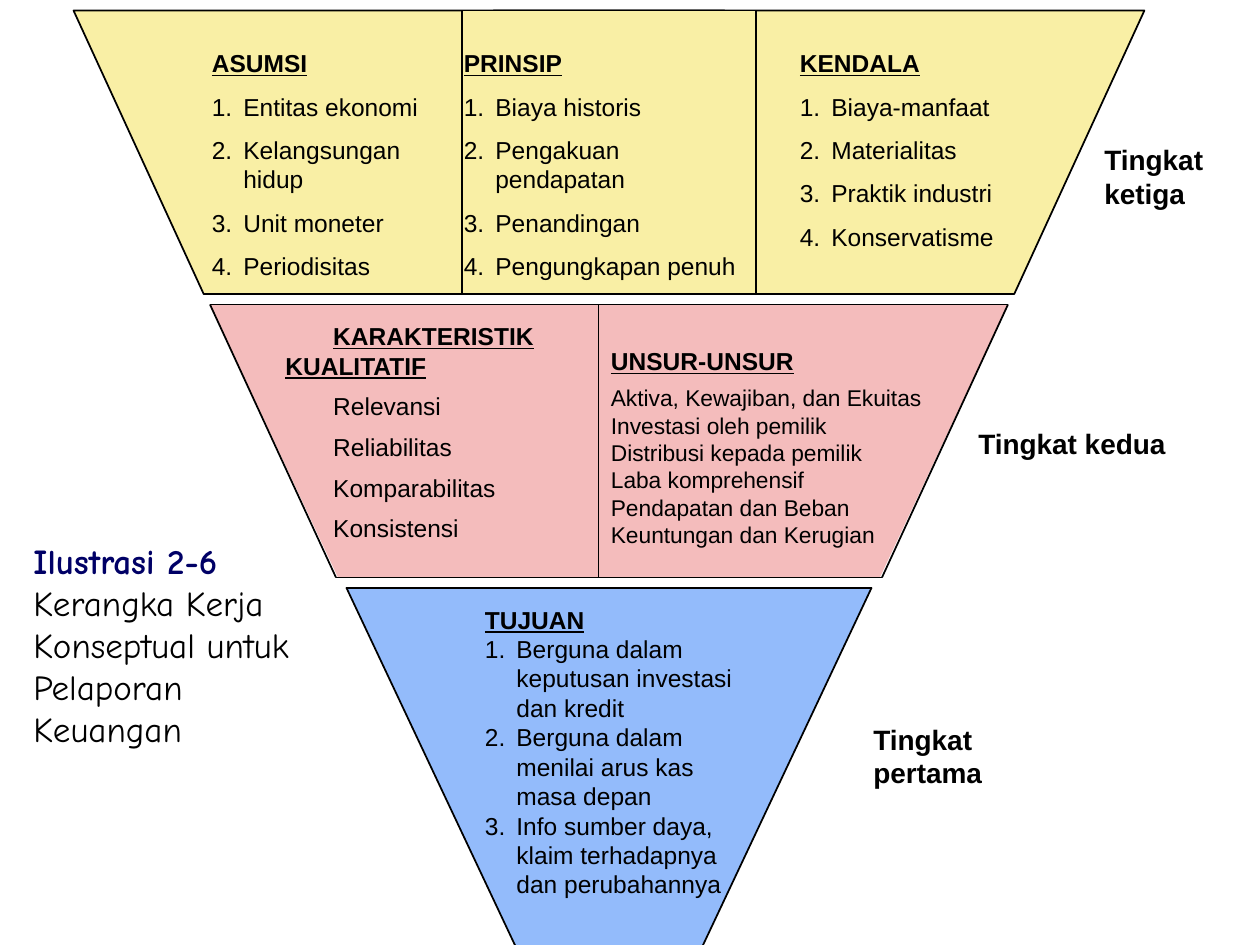
from dataclasses import dataclass

from lxml import etree
from pptx import Presentation
from pptx.dml import color
from pptx.enum import shapes, text
from pptx.oxml import ns
from pptx.util import Inches, Pt

COLS, ROWS = 120, 90
UNIT = Inches(10) / COLS
BLACK, NAVY = "000000", "000066"
GOLD, PINK, BLUE = "F9EFA5", "F4BCBC", "93BBFB"
KIND = shapes.MSO_SHAPE
HEAD = {"bold": True, "underline": True}
PLAIN = {"bold": False, "underline": False}


@dataclass
class Form:
    kind: int
    box: tuple
    fill: str
    line: bool = True
    turn: int = 0
    flip: bool = False


@dataclass
class Line:
    start: tuple
    end: tuple


@dataclass
class Note:
    box: tuple
    head: str
    items: tuple = ()
    size: int = 14
    body: int = 14
    gap: float = 0
    after: float = 0
    left: float = 0
    first: float = 0
    auto: bool = False
    under: bool = True


FORMS = [
    Form(KIND.FLOWCHART_MANUAL_INPUT, (52.5, 11.5, 26, 61), PINK, False, 90, True),
    Form(KIND.FLOWCHART_MANUAL_INPUT, (37.5, 11.5, 26, 61), PINK, False, 270),
    Form(KIND.FLOWCHART_MANUAL_INPUT, (64.5, -16.5, 27, 62), GOLD, True, 90, True),
    Form(KIND.FLOWCHART_MANUAL_INPUT, (24.5, -16.5, 27, 62), GOLD, True, 270),
    Form(KIND.FLOWCHART_MERGE, (33, 56, 50, 53), BLUE),
    Form(KIND.RECTANGLE, (44, 1, 28, 27), GOLD),
]

LINES = [
    Line((57, 29), (57, 55)),
    Line((32, 55), (84, 55)),
    Line((20, 29), (32, 55)),
    Line((96, 29), (84, 55)),
    Line((20, 29), (96, 29)),
]

THIRD = [
    ((19, 4, 24, 23.5), "ASUMSI",
     ("Entitas ekonomi", "Kelangsungan hidup", "Unit moneter", "Periodisitas")),
    ((43, 4, 30, 23.5), "PRINSIP",
     ("Biaya historis", "Pengakuan pendapatan", "Penandingan", "Pengungkapan penuh")),
    ((75, 4, 24, 20.75), "KENDALA",
     ("Biaya-manfaat", "Materialitas", "Praktik industri", "Konservatisme")),
]

LEVELS = [
    ((82, 68.2, 18, 7.7), "Tingkat pertama"),
    ((92, 40, 25, 4.4), "Tingkat kedua"),
    ((104, 13, 14, 7.7), "Tingkat ketiga"),
]

NOTES = [Note(*row, gap=8, left=3, first=-3, auto=True) for row in THIRD] + [
    Note((45, 57, 28, 29.2), "TUJUAN",
         ("1.\tBerguna dalam keputusan investasi dan kredit",
          "2.\tBerguna dalam menilai arus kas masa depan",
          "3.\tInfo sumber daya, klaim terhadapnya dan perubahannya"),
         left=3, first=-3),
    Note((57, 32.4, 34, 20.4), "UNSUR-UNSUR",
         ("Aktiva, Kewajiban, dan Ekuitas", "Investasi oleh pemilik",
          "Distribusi kepada pemilik", "Laba komprehensif",
          "Pendapatan dan Beban", "Keuntungan dan Kerugian"),
         body=13, after=4.8),
    Note((26, 30, 29, 22.4), "KARAKTERISTIK KUALITATIF",
         ("Relevansi", "Reliabilitas", "Komparabilitas", "Konsistensi"),
         gap=6.4, first=4.56),
] + [Note(*row, size=16, under=False) for row in LEVELS]


def span(*cells: float) -> list[int]:
    return [round(cell * UNIT) for cell in cells]


def tint(code: str) -> color.RGBColor:
    return color.RGBColor.from_string(code)


def style(goal, values: dict) -> None:
    for name, value in values.items():
        setattr(goal, name, value)


def stroke(line) -> None:
    line.color.rgb = tint(BLACK)
    line.width = Pt(1)


def draw_form(slide, form: Form) -> None:
    shape = slide.shapes.add_shape(form.kind, *span(*form.box))
    shape.rotation = form.turn
    shape.shadow.inherit = False
    shape.fill.solid()
    shape.fill.fore_color.rgb = tint(form.fill)
    if form.line:
        stroke(shape.line)
    else:
        shape.line.fill.background()
    if form.flip:
        shape.element.spPr.find(ns.qn("a:xfrm")).set("flipH", "1")


def draw_line(slide, line: Line) -> None:
    wire = slide.shapes.add_connector(
        shapes.MSO_CONNECTOR.STRAIGHT, *span(*line.start, *line.end))
    stroke(wire.line)
    etree.SubElement(wire.element.spPr, ns.qn("a:effectLst"))


def add_frame(slide, box: tuple):
    frame = slide.shapes.add_textbox(*span(*box)).text_frame
    style(frame, {"word_wrap": True,
                  "auto_size": text.MSO_AUTO_SIZE.SHAPE_TO_FIT_TEXT})
    return frame


def add_run(para, words: str, size: int, look: dict,
            face: str = "Arial", code: str = BLACK) -> None:
    run = para.add_run()
    run.text = words
    style(run.font, {"name": face, "size": Pt(size), **look})
    run.font.color.rgb = tint(code)


def indent(para, note: Note, auto: bool) -> None:
    props = para._p.get_or_add_pPr()
    left, first = span(note.left, note.first)
    props.set("marL", str(left))
    props.set("indent", str(first))
    if auto:
        mark = etree.SubElement(props, ns.qn("a:buAutoNum"))
        mark.set("type", "arabicPeriod")


def draw_note(slide, note: Note) -> None:
    frame = add_frame(slide, note.box)
    para = frame.paragraphs[0]
    para.space_after = Pt(note.after)
    indent(para, note, False)
    add_run(para, note.head, note.size, {**HEAD, "underline": note.under})
    for item in note.items:
        para = frame.add_paragraph()
        para.space_before = Pt(note.gap)
        indent(para, note, note.auto)
        add_run(para, item, note.body, PLAIN)


def draw_title(slide) -> None:
    para = add_frame(slide, (2, 50.75, 28, 21.25)).paragraphs[0]
    add_run(para, "Ilustrasi 2-6", 20, {"bold": True}, "Comic Neue", NAVY)
    add_run(para, " Kerangka Kerja Konseptual untuk Pelaporan Keuangan",
            20, {"bold": False}, "Comic Neue")


def main() -> None:
    deck = Presentation()
    width, height = span(COLS, ROWS)
    style(deck, {"slide_width": width, "slide_height": height})
    slide = deck.slides.add_slide(deck.slide_layouts[6])
    for form in FORMS:
        draw_form(slide, form)
    for line in LINES:
        draw_line(slide, line)
    for note in NOTES:
        draw_note(slide, note)
    draw_title(slide)
    deck.save("out.pptx")


if __name__ == "__main__":
    main()
